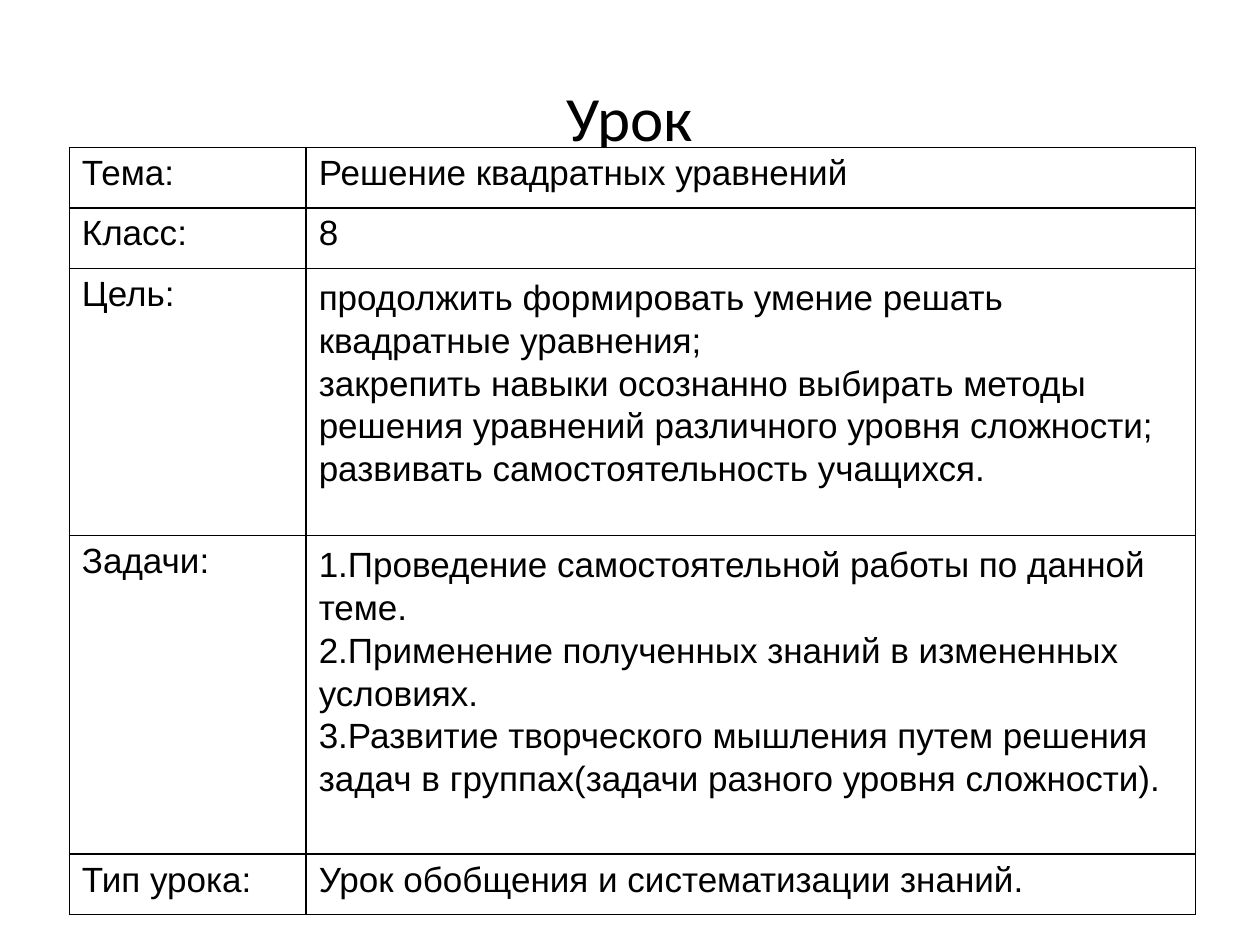
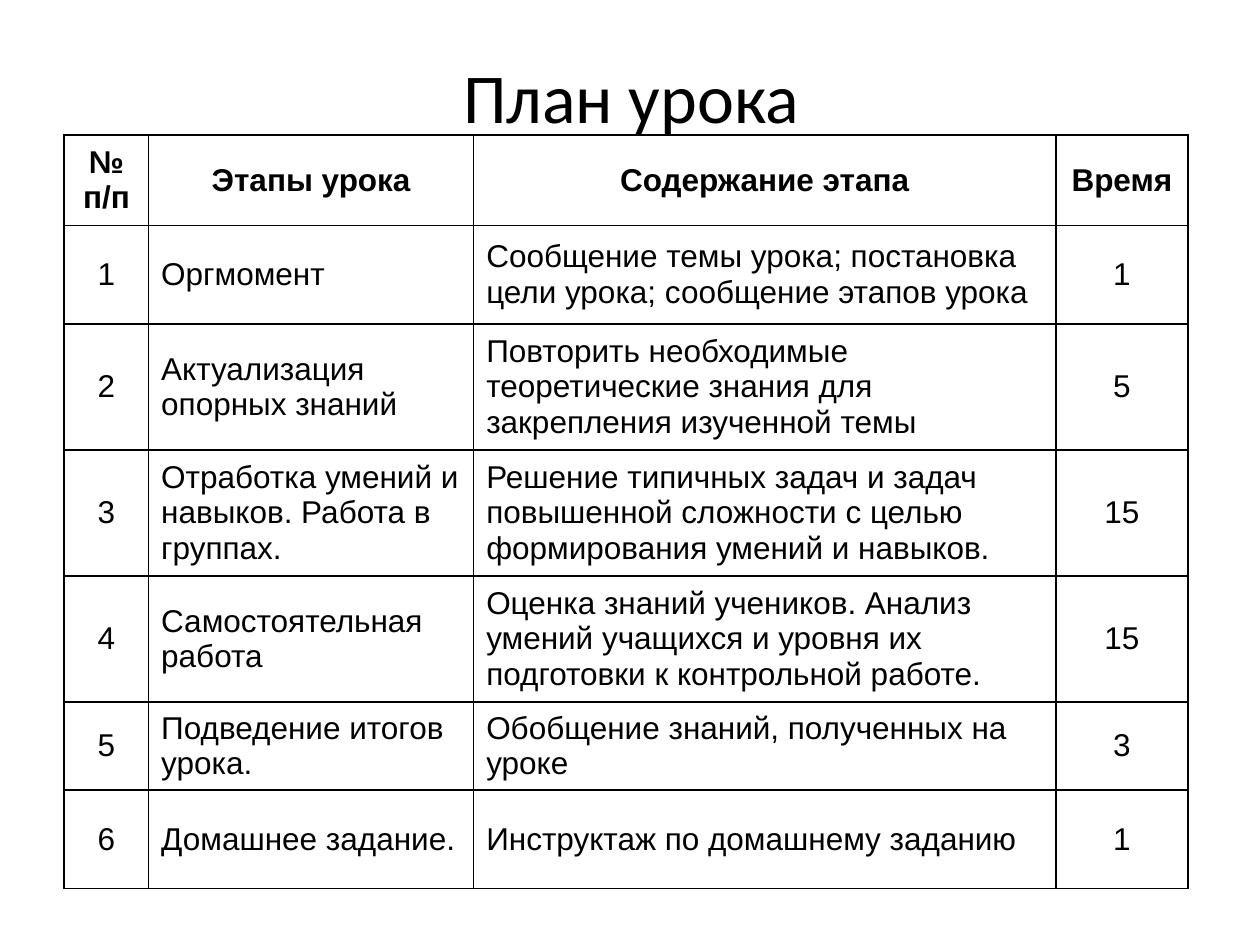
import pptx
import pptx.dml.color
import pptx.enum.text
import pptx.oxml.ns
import pptx.util
from lxml import etree

Inches = pptx.util.Inches
Pt = pptx.util.Pt
ALIGN = pptx.enum.text.PP_ALIGN
ANCHOR = pptx.enum.text.MSO_ANCHOR

BLACK = pptx.dml.color.RGBColor(0x00, 0x00, 0x00)
WHITE = pptx.dml.color.RGBColor(0xFF, 0xFF, 0xFF)


class LessonDeck:
    title_font = "Calibri"
    body_font = "Arial"
    border_width = Pt(1)

    def __init__(self):
        self.presentation = pptx.Presentation()
        self.presentation.slide_width = Inches(10)
        self.presentation.slide_height = Inches(7.5)
        self.slide = None

    def add_slide(self):
        blank = self.presentation.slide_layouts[6]
        self.slide = self.presentation.slides.add_slide(blank)

    def style_paragraph(self, paragraph, font, size, bold=False, align=ALIGN.LEFT):
        paragraph.alignment = align
        for run in paragraph.runs:
            run.font.name = font
            run.font.size = Pt(size)
            run.font.bold = bold
            run.font.color.rgb = BLACK

    def title(self, text, left, top, width, height, size):
        heading = self.slide.shapes.add_textbox(
            Inches(left), Inches(top), Inches(width), Inches(height))
        frame = heading.text_frame
        frame.word_wrap = True
        frame.vertical_anchor = ANCHOR.MIDDLE
        frame.text = text
        self.style_paragraph(frame.paragraphs[0], self.title_font, size,
                             align=ALIGN.CENTER)

    def table(self, rows, left, top, widths, heights, size, anchor=ANCHOR.TOP,
              header=False, centred_columns=()):
        grid = self.slide.shapes.add_table(
            len(rows), len(widths), Inches(left), Inches(top),
            Inches(sum(widths)), Inches(sum(heights))).table
        grid.first_row = header
        grid.horz_banding = False
        for column, width in zip(grid.columns, widths):
            column.width = Inches(width)
        for row, height in zip(grid.rows, heights):
            row.height = Inches(height)
        for r, texts in enumerate(rows):
            is_header = header and r == 0
            for c, text in enumerate(texts):
                cell = grid.cell(r, c)
                cell.vertical_anchor = anchor
                self.borders(cell)
                cell.fill.solid()
                cell.fill.fore_color.rgb = WHITE
                cell.text_frame.text = text
                centred = is_header or c in centred_columns
                for paragraph in cell.text_frame.paragraphs:
                    self.style_paragraph(paragraph, self.body_font, size, is_header,
                                         ALIGN.CENTER if centred else ALIGN.LEFT)
        return grid

    def borders(self, cell):
        properties = cell._tc.get_or_add_tcPr()
        for side in ("a:lnL", "a:lnR", "a:lnT", "a:lnB"):
            line = etree.SubElement(properties, pptx.oxml.ns.qn(side),
                                    w=str(self.border_width))
            fill = etree.SubElement(line, pptx.oxml.ns.qn("a:solidFill"))
            etree.SubElement(fill, pptx.oxml.ns.qn("a:srgbClr"), val=str(BLACK))

    def loosen(self, cell, numbered=False):
        for paragraph in cell.text_frame.paragraphs:
            paragraph.line_spacing = 1.1
            if numbered:
                properties = paragraph._p.get_or_add_pPr()
                properties.set("marL", "0")
                properties.set("indent", "0")
                etree.SubElement(properties, pptx.oxml.ns.qn("a:buFont"),
                                 typeface=self.body_font)
                etree.SubElement(properties, pptx.oxml.ns.qn("a:buAutoNum"),
                                 type="arabicPeriod")


GOALS = "\n".join([
    "продолжить формировать умение решать квадратные уравнения;",
    "закрепить навыки осознанно выбирать методы решения уравнений "
    "различного уровня сложности;",
    "развивать самостоятельность учащихся.",
])
TASKS = "\n".join([
    "Проведение самостоятельной работы по данной теме.",
    "Применение полученных знаний в измененных условиях.",
    "Развитие творческого мышления путем решения задач в группах"
    "(задачи разного уровня сложности).",
])
LESSON = [
    ("Тема:", "Решение квадратных уравнений"),
    ("Класс:", "8"),
    ("Цель:", GOALS),
    ("Задачи:", TASKS),
    ("Тип урока:", "Урок обобщения и систематизации знаний."),
]
PLAN_HEADER = ("№ п/п", "Этапы урока", "Содержание этапа", "Время")
STAGES = [
    ("Оргмомент",
     "Сообщение темы урока; постановка цели урока; сообщение этапов урока", 1),
    ("Актуализация опорных знаний",
     "Повторить необходимые теоретические знания для закрепления изученной темы", 5),
    ("Отработка умений и навыков. Работа в группах.",
     "Решение типичных задач и задач повышенной сложности с целью "
     "формирования умений и навыков.", 15),
    ("Самостоятельная работа",
     "Оценка знаний учеников. Анализ умений учащихся и уровня их "
     "подготовки к контрольной работе.", 15),
    ("Подведение итогов урока.", "Обобщение знаний, полученных на уроке", 3),
    ("Домашнее задание.", "Инструктаж по домашнему заданию", 1),
]


def main():
    deck = LessonDeck()

    # Lesson passport
    deck.add_slide()
    deck.title("Урок", 0.5, 0.3, 9, 1.25, size=36)
    passport = deck.table(LESSON, 0.55, 1.17, widths=[1.88, 7.06],
                          heights=[0.48, 0.48, 2.12, 2.53, 0.48], size=20)
    deck.loosen(passport.cell(2, 1))
    deck.loosen(passport.cell(3, 1), numbered=True)

    # Lesson plan
    deck.add_slide()
    deck.title("План урока", 0.51, 0.21, 9, 1.09, size=40)
    plan = [PLAN_HEADER] + [
        (str(number), stage, content, str(minutes))
        for number, (stage, content, minutes) in enumerate(STAGES, start=1)]
    deck.table(plan, 0.51, 1.07, widths=[0.67, 2.58, 4.62, 1.05],
               heights=[0.72, 0.78, 0.94, 1, 0.94, 0.66, 0.78], size=18,
               anchor=ANCHOR.MIDDLE, header=True, centred_columns=(0, 3))

    deck.presentation.save("out.pptx")


if __name__ == "__main__":
    main()
